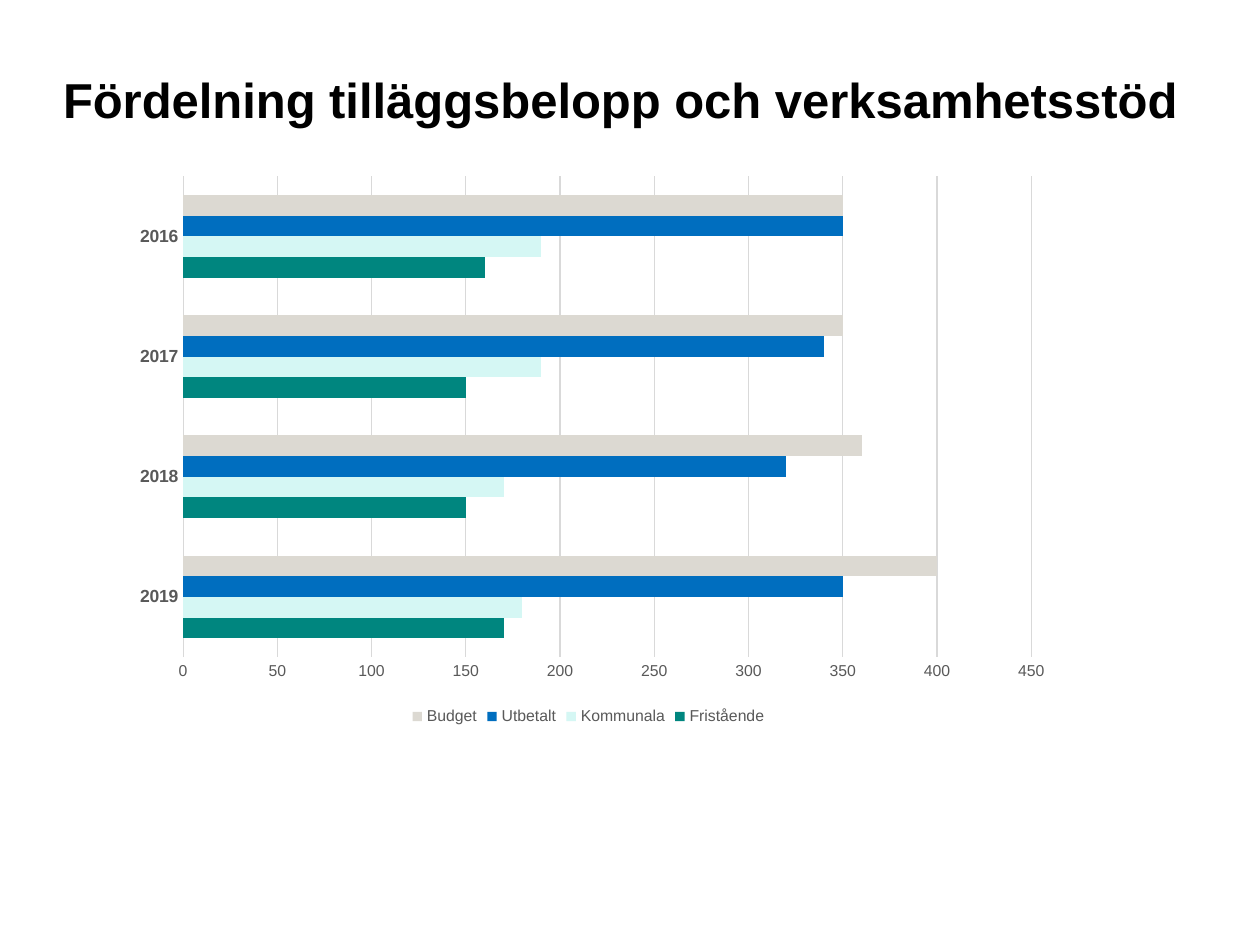
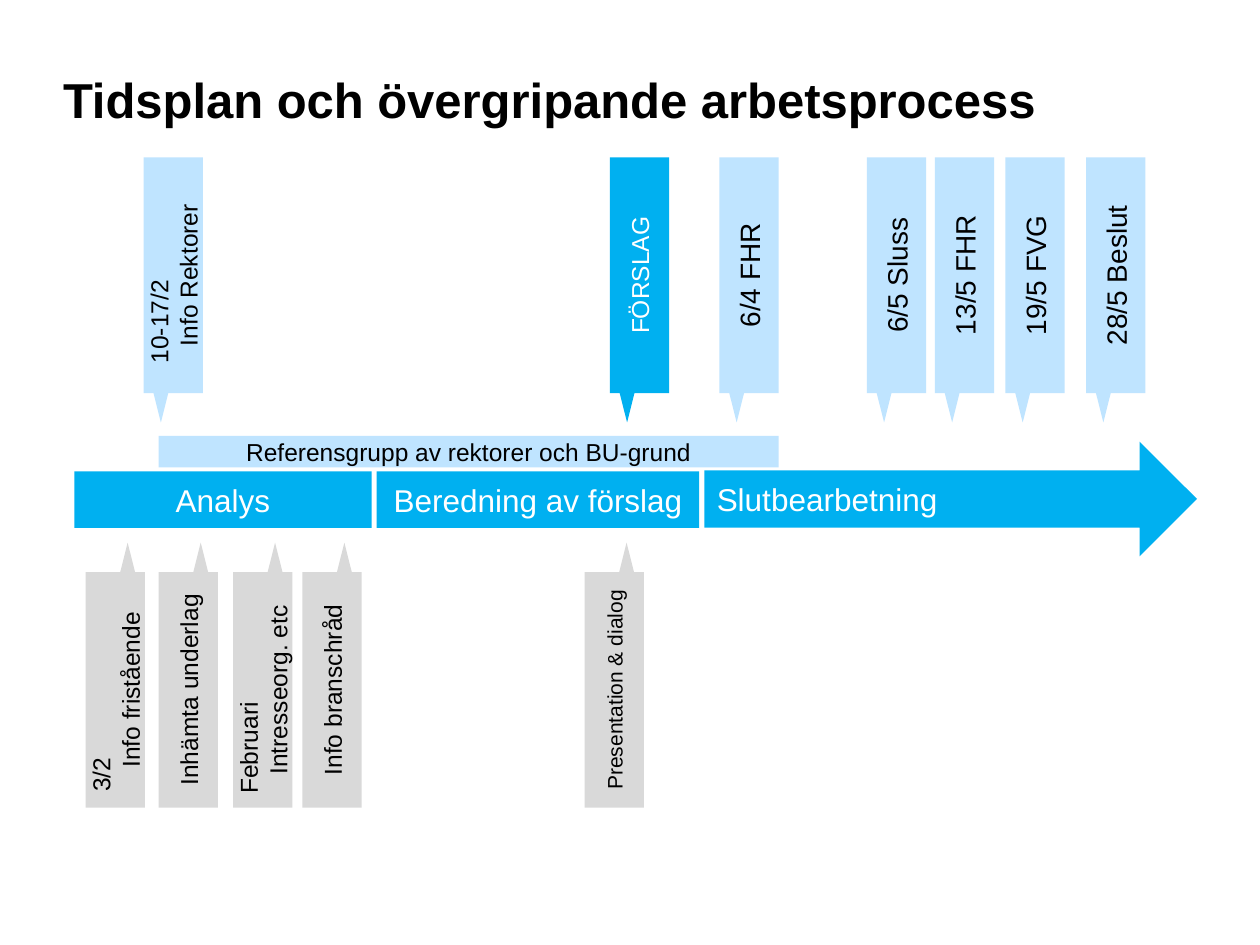
from dataclasses import dataclass

from lxml import etree
from pptx import Presentation
from pptx.chart.data import CategoryChartData
from pptx.dml.color import RGBColor
from pptx.enum.chart import XL_CHART_TYPE, XL_LEGEND_POSITION, XL_TICK_MARK
from pptx.enum.shapes import MSO_SHAPE
from pptx.enum.text import MSO_ANCHOR, MSO_AUTO_SIZE, PP_ALIGN
from pptx.oxml.ns import qn
from pptx.util import Pt

BARS = XL_CHART_TYPE.BAR_CLUSTERED
BOTTOM = XL_LEGEND_POSITION.BOTTOM
NO_TICK = XL_TICK_MARK.NONE
ARROW = MSO_SHAPE.RIGHT_ARROW
FLAG = MSO_SHAPE.RECTANGULAR_CALLOUT
RECT = MSO_SHAPE.RECTANGLE
LEFT, CENTER = PP_ALIGN.LEFT, PP_ALIGN.CENTER
TOP, MIDDLE = MSO_ANCHOR.TOP, MSO_ANCHOR.MIDDLE
TITLE_ONLY = 5


@dataclass(frozen=True)
class Theme:
    font: str = "Arial"
    black: str = "000000"
    white: str = "FFFFFF"
    blue: str = "00B0F0"
    pale: str = "BFE4FF"
    gray: str = "D9D9D9"
    label: str = "595959"
    title: int = 28
    phase: int = 18
    date: int = 16
    note: int = 14
    small: int = 12
    axis: int = 10
    tick: int = 9


T = Theme()
FLAG_W, FLAG_H = 33.84, 134.64
UPPER_Y, LOWER_Y = 90, 326.88

YEARS = ["2019", "2018", "2017", "2016"]
SERIES = [
    ("Fristående", "00867F", [170, 150, 150, 160]),
    ("Kommunala", "D5F7F4", [180, 170, 190, 190]),
    ("Utbetalt", "006EBF", [350, 320, 340, 350]),
    ("Budget", "DCD9D2", [400, 360, 350, 350]),
]
DATES = [
    (411.12, "6/4 FHR"),
    (495.36, "6/5 Sluss"),
    (534.24, "13/5 FHR"),
    (574.56, "19/5 FVG"),
    (620.64, "28/5 Beslut"),
]
# Left edge, text, type size, indent of a leading date line
NOTES = [
    (48.96, "3/2\nInfo fristående", T.note, 9),
    (90.72, "Inhämta underlag", T.note, 0),
    (133.2, "Februari\nIntresseorg. etc", T.note, 8),
    (172.8, "Info branschråd", T.note, 0),
    (334.08, "Presentation & dialog", T.small, 0),
]


def rgb(code):
    return RGBColor.from_string(code)


def style(font, size, color, bold=False):
    font.name, font.size, font.bold = T.font, Pt(size), bold
    font.color.rgb = rgb(color)


def write(frame, text, size=T.note, color=T.black, bold=False, align=CENTER,
          anchor=MIDDLE, inset=(0, 0), indent=0):
    """Fill a frame; a first line with an indent is set flush left."""
    frame.word_wrap = True
    frame.auto_size = MSO_AUTO_SIZE.NONE
    frame.vertical_anchor = anchor
    frame.margin_left, frame.margin_top = map(Pt, inset)
    frame.margin_right = frame.margin_bottom = 0
    for row, line in enumerate(text.split("\n")):
        para = frame.add_paragraph() if row else frame.paragraphs[0]
        para.alignment = align
        if indent and row == 0:
            para.alignment = LEFT
            para._p.get_or_add_pPr().set("marL", str(Pt(indent)))
        run = para.add_run()
        run.text = line
        style(run.font, size, color, bold)


def add_page(deck, title):
    slide = deck.slides.add_slide(deck.slide_layouts[TITLE_ONLY])
    head = slide.shapes.title
    head.left, head.top, head.width, head.height = map(Pt, (36, 36, 648, 65.5))
    write(head.text_frame, title, size=T.title, bold=True, align=LEFT,
          anchor=TOP, inset=(0, 3.5))
    return slide


def add_block(slide, kind, box, fill, text, **form):
    block = slide.shapes.add_shape(kind, *map(Pt, box))
    block.shadow.inherit = False
    block.fill.solid()
    block.fill.fore_color.rgb = rgb(fill)
    block.line.fill.background()
    write(block.text_frame, text, **form)
    return block


def add_flag(slide, left, text, fill=T.pale, below=False, **form):
    """Callout with text reading upward; below the arrow it is turned over."""
    box = (left, LOWER_Y if below else UPPER_Y, FLAG_W, FLAG_H)
    flag = add_block(slide, FLAG, box, fill, text, **form)
    flag.rotation = 180 if below else 0
    body = flag.text_frame._txBody.find(qn("a:bodyPr"))
    body.set("vert", "vert" if below else "vert270")


def place_plot(chart, **parts):
    """Fix the inner plot area as fractions of the chart."""
    plot = chart._chartSpace.chart.plotArea
    for old in plot.findall(qn("c:layout")):
        plot.remove(old)
    layout = etree.Element(qn("c:layout"))
    plot.insert(0, layout)
    manual = etree.SubElement(layout, qn("c:manualLayout"))
    rules = {"layoutTarget": "inner", "xMode": "edge", "yMode": "edge", **parts}
    for name, value in rules.items():
        etree.SubElement(manual, qn("c:" + name)).set("val", str(value))


def add_bars(slide, box):
    data = CategoryChartData()
    data.categories = YEARS
    for name, _, values in SERIES:
        data.add_series(name, values)
    chart = slide.shapes.add_chart(BARS, *map(Pt, box), data).chart
    style(chart.font, T.axis, T.black)
    chart.has_title = False
    chart.has_legend = True
    chart.legend.position = BOTTOM
    chart.legend.include_in_layout = False
    style(chart.legend.font, T.tick, T.label)

    plot = chart.plots[0]
    plot.gap_width = 182
    plot.vary_by_categories = False
    for bar, (_, color, _) in zip(plot.series, SERIES):
        bar.format.fill.solid()
        bar.format.fill.fore_color.rgb = rgb(color)

    years, scale = chart.category_axis, chart.value_axis
    for axis in (years, scale):
        axis.major_tick_mark = axis.minor_tick_mark = NO_TICK
    style(years.tick_labels.font, T.axis, T.label, bold=True)
    style(scale.tick_labels.font, T.tick, T.label)
    scale.minimum_scale, scale.maximum_scale, scale.major_unit = 0, 450, 50
    scale.has_major_gridlines = True
    scale.format.line.fill.background()
    for line in (years.format.line, scale.major_gridlines.format.line):
        line.color.rgb = rgb(T.gray)
        line.width = Pt(0.75)
    place_plot(chart, x=0.07, y=0.02, w=0.9, h=0.85)


def add_budget(deck):
    slide = add_page(deck, "Fördelning tilläggsbelopp och verksamhetsstöd")
    add_bars(slide, (66.96, 94.32, 538.56, 323.28))


def add_plan(deck):
    slide = add_page(deck, "Tidsplan och övergripande arbetsprocess")
    phase = {"size": T.phase, "color": T.white}
    add_block(slide, ARROW, (402.48, 252.4, 281.52, 65.52), T.blue,
              "Slutbearbetning", align=LEFT, inset=(7.2, 0), **phase)
    add_block(slide, RECT, (42.48, 269.28, 169.92, 32.4), T.blue,
              "Analys", **phase)
    add_block(slide, RECT, (215.28, 269.28, 184.32, 32.4), T.blue,
              "Beredning av förslag", **phase)
    add_block(slide, RECT, (90.72, 249.12, 354.24, 18), T.pale,
              "Referensgrupp av rektorer och BU-grund")

    add_flag(slide, 82.08, "10-17/2\nInfo Rektorer", indent=17)
    add_flag(slide, 348.48, "FÖRSLAG", fill=T.blue, color=T.white)
    for left, text in DATES:
        add_flag(slide, left, text, size=T.date)
    for left, text, size, indent in NOTES:
        add_flag(slide, left, text, fill=T.gray, below=True,
                 size=size, indent=indent)


def main():
    deck = Presentation()
    deck.slide_width, deck.slide_height = Pt(720), Pt(540)
    add_budget(deck)
    add_plan(deck)
    deck.save("out.pptx")


if __name__ == "__main__":
    main()
